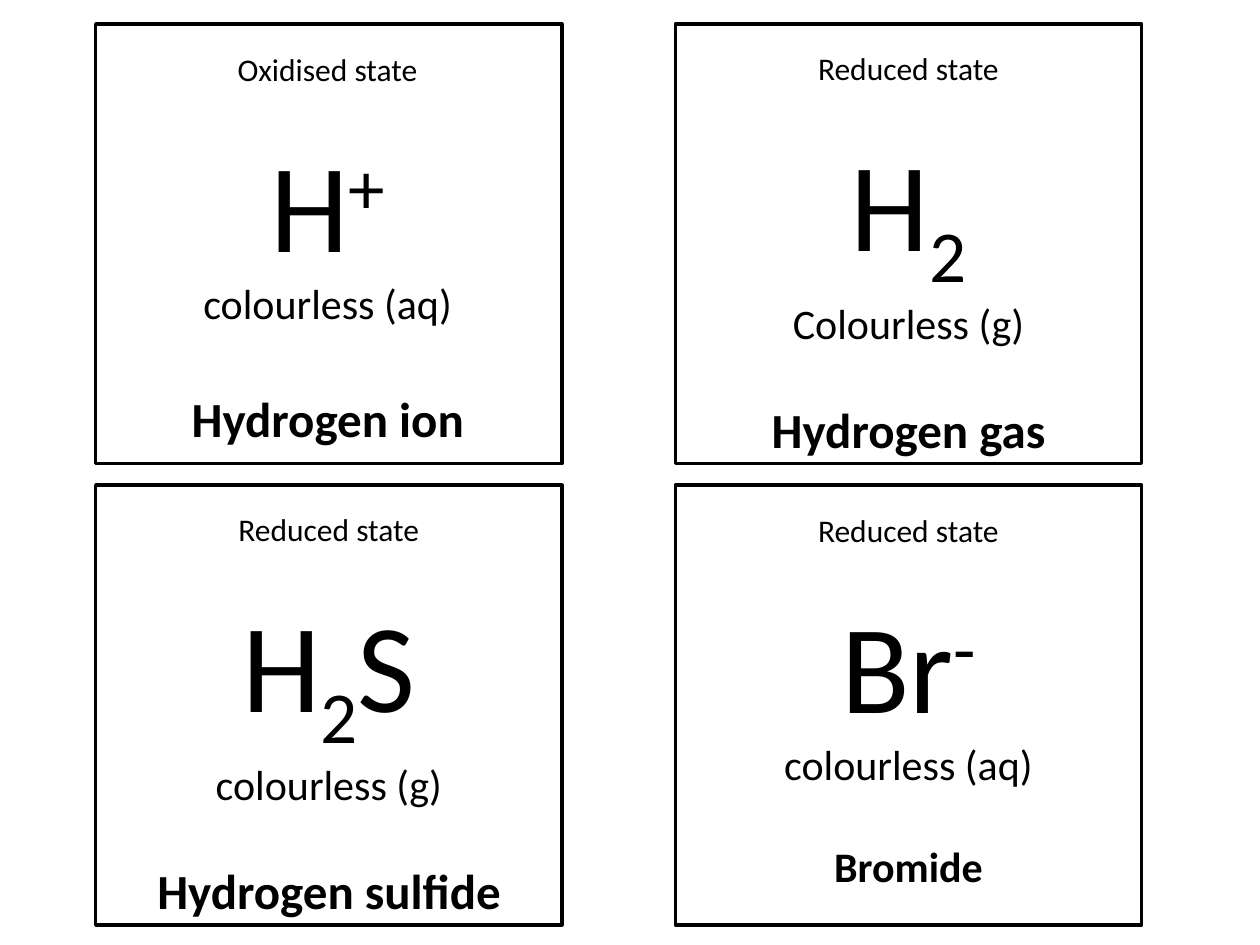
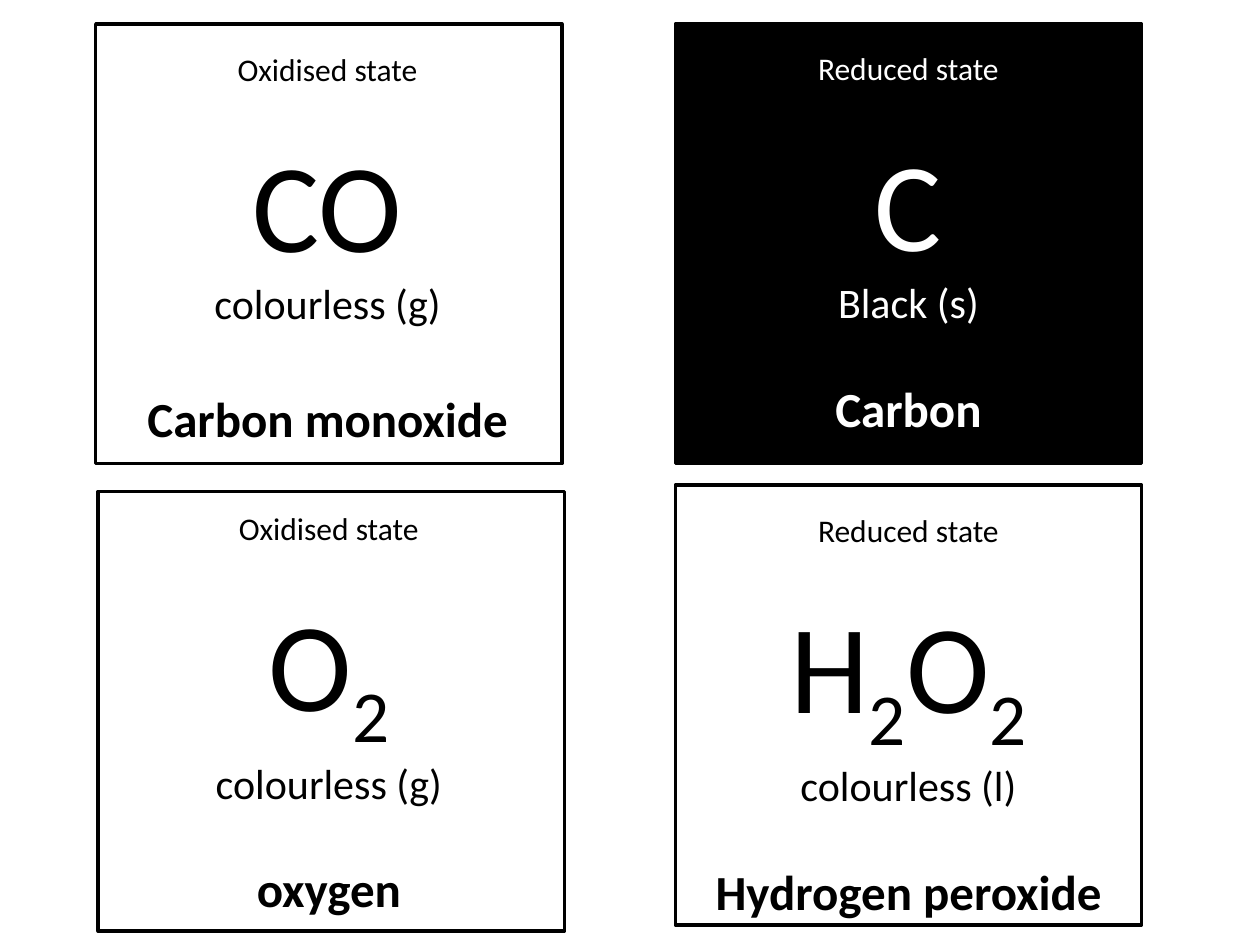
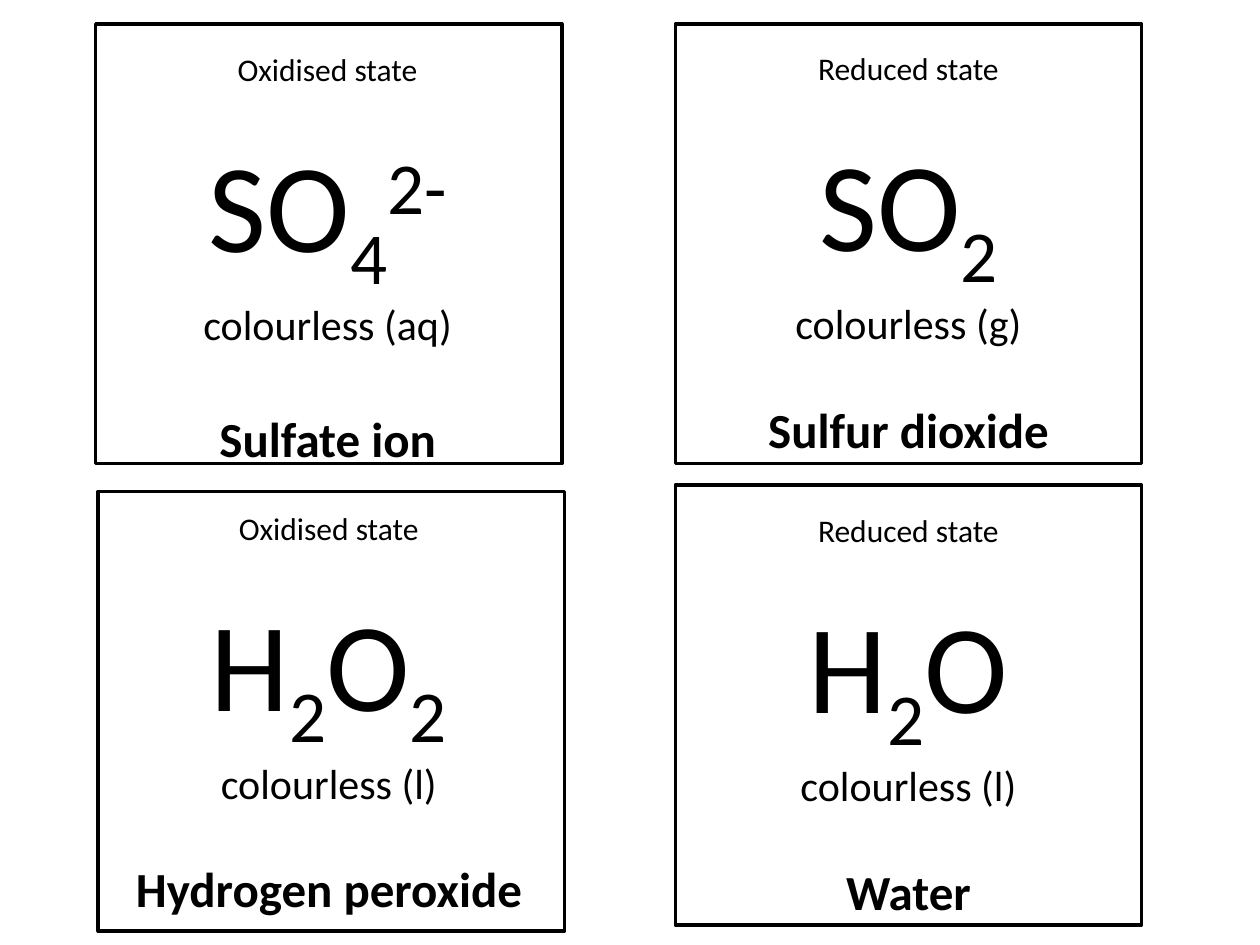
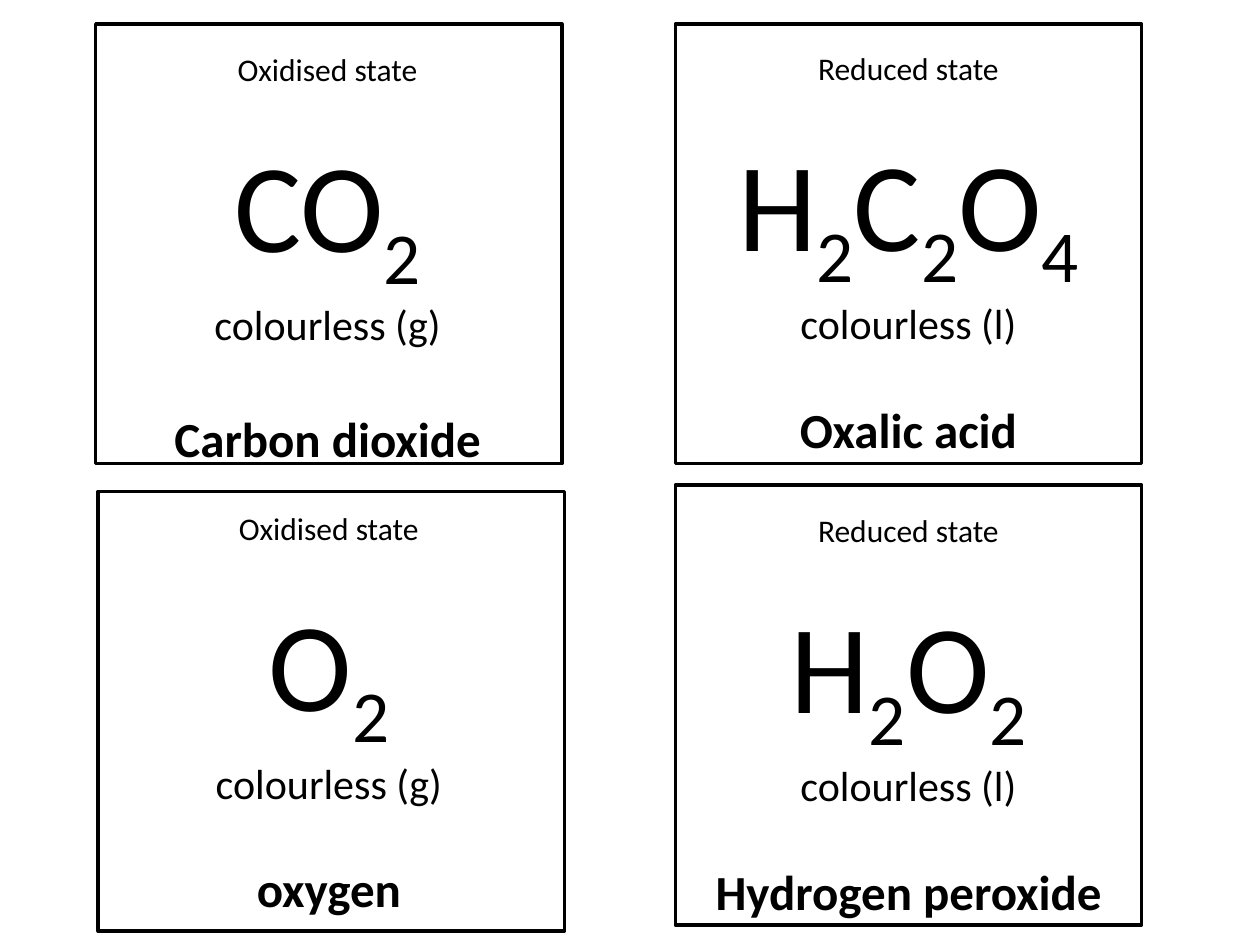
from dataclasses import dataclass, replace

from pptx import Presentation
from pptx import util as u
from pptx.dml import color
from pptx.enum import shapes, text


@dataclass(frozen=True)
class Theme:
    font: str = "Calibri"
    black: color.RGBColor = color.RGBColor(0, 0, 0)
    white: color.RGBColor = color.RGBColor(255, 255, 255)
    state: int = 18
    formula: int = 72
    look: int = 24
    name: int = 28
    border: int = 2
    line_height: float = 1.22


@dataclass(frozen=True)
class Slot:
    frame_left: float
    frame_top: float
    text_left: float
    text_top: float
    text_height: float = 3.2
    name_gap: int = 24
    filled: bool = True


@dataclass(frozen=True)
class Card:
    slot: Slot
    state: str
    formula: str
    look: str
    name: str
    dark: bool = False
    name_size: int = 28


THEME = Theme()
FRAME_WIDTH, FRAME_HEIGHT, TEXT_WIDTH = 3.7, 3.49, 4.02
BASELINES = {"_": "-25000", "^": "30000"}

TOP_LEFT = Slot(0.76, 0.19, 0.59, 0.35, text_height=3.33, name_gap=28, filled=False)
TOP_RIGHT = Slot(5.36, 0.19, 5.2, 0.34)
BOTTOM_LEFT = Slot(0.78, 3.9, 0.6, 3.99)
BOTTOM_RIGHT = Slot(5.36, 3.85, 5.2, 4.01)
RAISED_LEFT = replace(BOTTOM_LEFT, frame_left=0.76, frame_top=3.85, text_top=4.0)
SHORT_RIGHT = replace(BOTTOM_RIGHT, text_height=3.13)

OXIDISED, REDUCED = "Oxidised state", "Reduced state"
GAS, LIQUID, AQUEOUS = "colourless (g)", "colourless (l)", "colourless (aq)"
OXYGEN = Card(BOTTOM_LEFT, OXIDISED, "O _2", GAS, "oxygen")
PEROXIDE = Card(BOTTOM_RIGHT, REDUCED, "H _2 O _2", LIQUID, "Hydrogen peroxide")

PAGES: list[list[Card]] = [
    [
        Card(TOP_LEFT, OXIDISED, "H ^+", AQUEOUS, "Hydrogen ion"),
        Card(TOP_RIGHT, REDUCED, "H _2", "Colourless (g)", "Hydrogen gas"),
        Card(SHORT_RIGHT, REDUCED, "Br ^-", AQUEOUS, "Bromide", name_size=24),
        Card(RAISED_LEFT, REDUCED, "H _2 S", GAS, "Hydrogen sulfide"),
    ],
    [
        Card(TOP_LEFT, OXIDISED, "CO", GAS, "Carbon monoxide"),
        OXYGEN,
        Card(TOP_RIGHT, REDUCED, "C", "Black (s)", "Carbon", dark=True),
        PEROXIDE,
    ],
    [
        Card(TOP_LEFT, OXIDISED, "SO _4 ^2-", AQUEOUS, "Sulfate ion"),
        replace(PEROXIDE, slot=BOTTOM_LEFT, state=OXIDISED),
        Card(TOP_RIGHT, REDUCED, "SO _2", GAS, "Sulfur dioxide"),
        Card(BOTTOM_RIGHT, REDUCED, "H _2 O", LIQUID, "Water"),
    ],
    [
        Card(TOP_LEFT, OXIDISED, "CO _2", GAS, "Carbon dioxide"),
        OXYGEN,
        Card(TOP_RIGHT, REDUCED, "H _2 C _2 O _4", LIQUID, "Oxalic acid"),
        PEROXIDE,
    ],
]


def add_span(para, words: str, *, size: int, ink: color.RGBColor,
             bold: bool = False, baseline: str | None = None) -> None:
    span = para.add_run()
    span.text = words
    span.font.name = THEME.font
    span.font.size = u.Pt(size)
    span.font.bold = bold
    span.font.color.rgb = ink
    if baseline:
        span._r.get_or_add_rPr().set("baseline", baseline)


def add_formula(para, formula: str, ink: color.RGBColor) -> None:
    for part in formula.split():
        add_span(para, part.lstrip("_^"), size=THEME.formula, ink=ink,
                 baseline=BASELINES.get(part[0]))


def next_para(frame, gap: int = 0):
    para = frame.add_paragraph()
    para.alignment = text.PP_ALIGN.CENTER
    para.space_before = u.Pt(round(gap * THEME.line_height, 1))
    return para


def draw_frame(page, card: Card) -> None:
    slot = card.slot
    box = page.shapes.add_shape(
        shapes.MSO_SHAPE.RECTANGLE, u.Inches(slot.frame_left), u.Inches(slot.frame_top),
        u.Inches(FRAME_WIDTH), u.Inches(FRAME_HEIGHT))
    box.shadow.inherit = False
    box.line.color.rgb = THEME.black
    box.line.width = u.Pt(THEME.border)
    if slot.filled:
        box.fill.solid()
        box.fill.fore_color.rgb = THEME.black if card.dark else THEME.white
    else:
        box.fill.background()


def draw_label(page, card: Card) -> None:
    slot = card.slot
    ink = THEME.white if card.dark else THEME.black
    box = page.shapes.add_textbox(
        u.Inches(slot.text_left), u.Inches(slot.text_top),
        u.Inches(TEXT_WIDTH), u.Inches(slot.text_height))
    frame = box.text_frame
    frame.word_wrap = True
    frame.auto_size = text.MSO_AUTO_SIZE.SHAPE_TO_FIT_TEXT
    first = frame.paragraphs[0]
    first.alignment = text.PP_ALIGN.CENTER
    add_span(first, card.state, size=THEME.state, ink=ink)
    add_formula(next_para(frame, THEME.state), card.formula, ink)
    add_span(next_para(frame), card.look, size=THEME.look, ink=ink)
    add_span(next_para(frame, slot.name_gap), card.name, size=card.name_size,
             ink=ink, bold=True)


def main() -> None:
    deck = Presentation()
    deck.slide_width, deck.slide_height = u.Inches(10), u.Inches(7.5)
    blank = deck.slide_layouts.get_by_name("Blank")
    for cards in PAGES:
        page = deck.slides.add_slide(blank)
        for card in cards:
            draw_frame(page, card)
        for card in cards:
            draw_label(page, card)
    deck.save("out.pptx")


if __name__ == "__main__":
    main()
